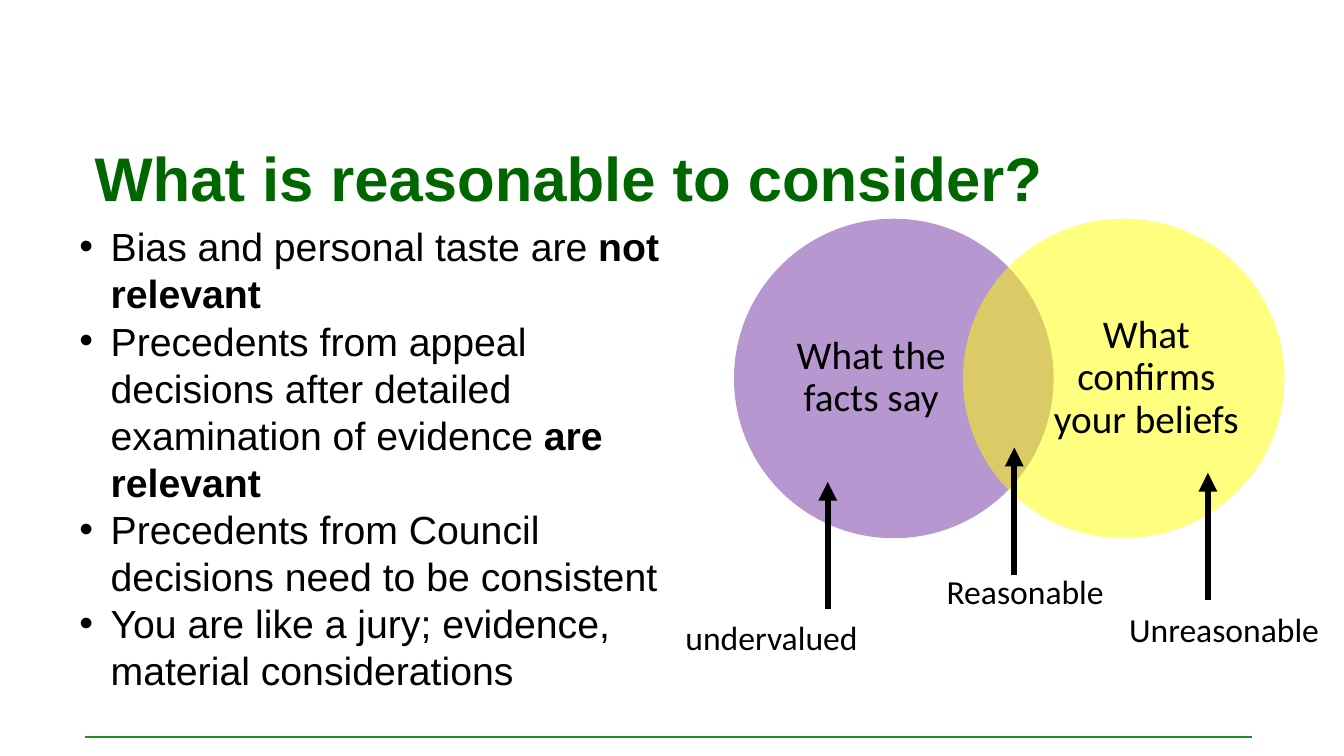
from lxml.etree import SubElement
from pptx import Presentation
from pptx.dml.color import RGBColor
from pptx.enum.shapes import MSO_CONNECTOR as CONN, MSO_SHAPE as SHAPE
from pptx.enum.text import MSO_ANCHOR as ANCHOR, PP_ALIGN as ALIGN
from pptx.oxml.ns import qn
from pptx.util import Inches, Pt

BULLETS = [
    [("Bias and personal taste are ", False), ("not relevant", True)],
    [("Precedents from appeal decisions after detailed examination of evidence ", False),
     ("are relevant", True)],
    [("Precedents from Council decisions need to be consistent", False)],
    [("You are like a jury; evidence, material considerations", False)],
]
# circle left, circle width, label left, fill, label
CIRCLES = [
    (7.28, 3.17, 7.72, "7030A0", "What the facts say"),
    (9.55, 3.19, 10.45, "FFFF00", "What confirms your beliefs"),
]
# arrow x, arrow start y, label left, label top, label width, label
POINTERS = [
    (10.06, 5.7, 9.29, 5.61, 1.85, "Reasonable"),
    (8.21, 6.04, 6.7, 6.07, 2.57, "undervalued"),
    (11.98, 5.95, 11.1, 5.99, 2.23, "Unreasonable"),
]
ARROW_LENGTH = 1.26


def rgb(color):
    return RGBColor.from_string(color)


def style(font, name, size, color="000000", bold=False):
    font.name, font.size, font.bold = name, Pt(size), bold
    font.color.rgb = rgb(color)


def add_textbox(slide, x, y, w, h, anchor=ANCHOR.TOP):
    tf = slide.shapes.add_textbox(Inches(x), Inches(y), Inches(w), Inches(h)).text_frame
    tf.word_wrap = True
    tf.vertical_anchor = anchor
    return tf


def add_text(slide, x, y, w, h, text, name, size, color="000000", bold=False,
             anchor=ANCHOR.TOP):
    tf = add_textbox(slide, x, y, w, h, anchor)
    tf.text = text
    style(tf.paragraphs[0].runs[0].font, name, size, color, bold)
    return tf


def add_bullets(slide, x, y, w, h, items):
    """Each item is a list of (text, bold) runs."""
    tf = add_textbox(slide, x, y, w, h)
    for i, item in enumerate(items):
        p = tf.add_paragraph() if i else tf.paragraphs[0]
        pPr = p._p.get_or_add_pPr()
        pPr.set("marL", str(Inches(0.31)))
        pPr.set("indent", str(-Inches(0.31)))
        SubElement(pPr, qn("a:buFont"), typeface="Arial")
        SubElement(pPr, qn("a:buChar"), char="•")
        for text, bold in item:
            r = p.add_run()
            r.text = text
            style(r.font, "Arial", 28, bold=bold)


def add_circle(slide, x, y, w, h, color):
    """Half-transparent circle without outline."""
    sp = slide.shapes.add_shape(SHAPE.OVAL, Inches(x), Inches(y), Inches(w), Inches(h))
    sp.shadow.inherit = False
    sp.fill.solid()
    sp.fill.fore_color.rgb = rgb(color)
    fill = sp._element.spPr.find(qn("a:solidFill"))
    SubElement(fill[0], qn("a:alpha"), val="50000")
    sp.line.fill.background()


def add_circle_label(slide, x, y, w, h, text):
    tf = add_text(slide, x, y, w, h, text, "Calibri", 28, anchor=ANCHOR.MIDDLE)
    tf.margin_left = tf.margin_right = tf.margin_top = tf.margin_bottom = 0
    p = tf.paragraphs[0]
    p.alignment = ALIGN.CENTER
    p.line_spacing = 0.9


def add_line(slide, x1, y1, x2, y2, color, width, arrow=False):
    c = slide.shapes.add_connector(
        CONN.STRAIGHT, Inches(x1), Inches(y1), Inches(x2), Inches(y2))
    c.line.color.rgb = rgb(color)
    c.line.width = Pt(width)
    if arrow:
        SubElement(c.line._get_or_add_ln(), qn("a:tailEnd"), type="triangle")
    SubElement(c._element.spPr, qn("a:effectLst"))


def main():
    prs = Presentation()
    prs.slide_width, prs.slide_height = Inches(13.33), Inches(7.5)
    slide = prs.slides.add_slide(prs.slide_layouts[6])

    add_line(slide, 0.84, 7.31, 12.42, 7.31, "228B22", 1.5)
    title = add_text(slide, 0.84, 1.08, 12.24, 1.45, "What is reasonable to consider?",
                     "Arial", 44, "006600", True, ANCHOR.MIDDLE)
    title.paragraphs[0].line_spacing = 0.9
    add_bullets(slide, 0.69, 2.16, 6.26, 5.12, BULLETS)

    for x, w, label_x, color, label in CIRCLES:
        add_circle(slide, x, 2.17, w, 3.17, color)
        add_circle_label(slide, label_x, 2.54, 1.84, 2.42, label)
    for x, y, label_x, label_y, w, label in POINTERS:
        tf = add_text(slide, label_x, label_y, w, 0.5, label, "Calibri", 24)
        tf.word_wrap = label != "Reasonable"
        add_line(slide, x, y, x, y - ARROW_LENGTH, "000000", 4.5, arrow=True)

    prs.save("out.pptx")


if __name__ == "__main__":
    main()
